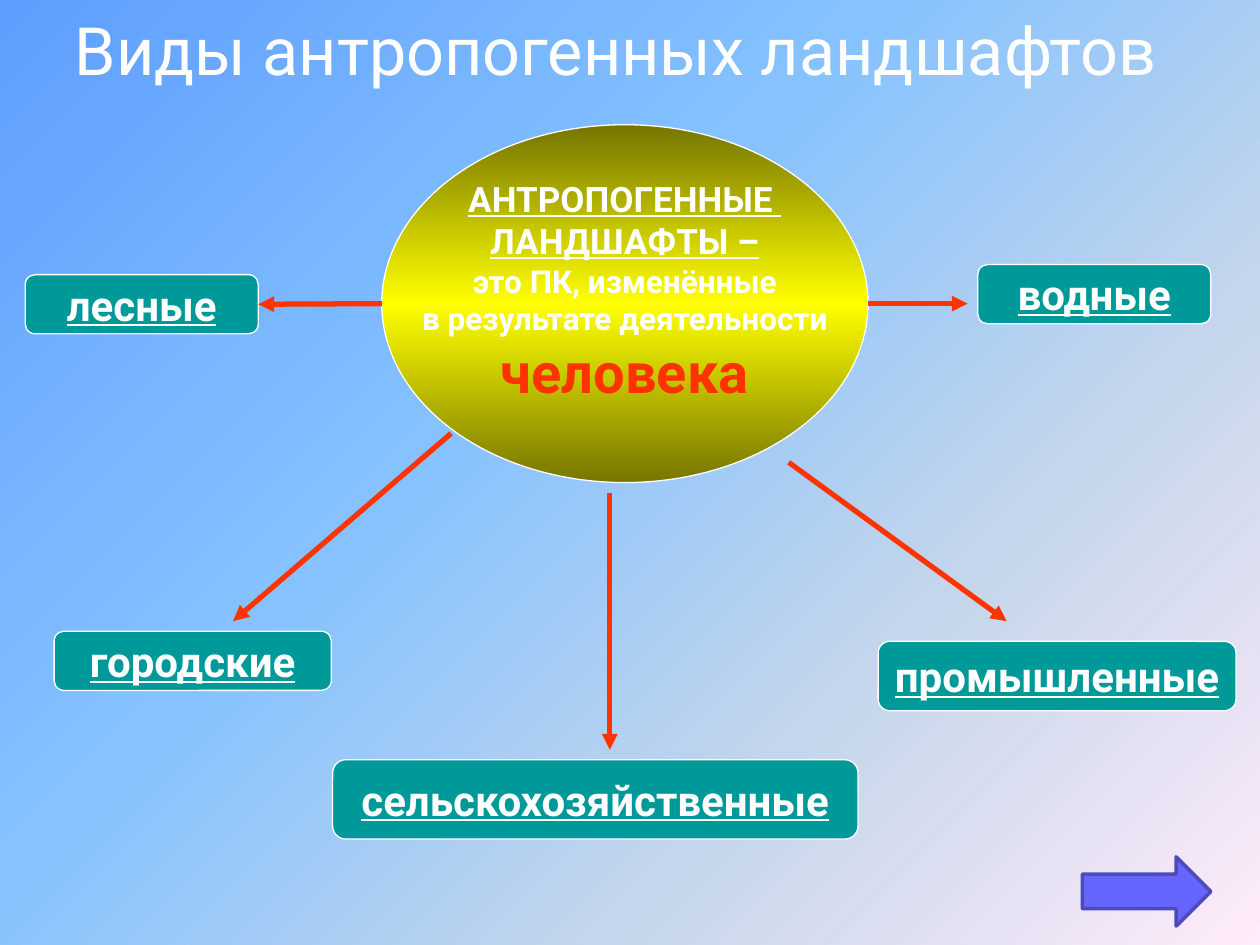
from dataclasses import dataclass
from lxml.etree import SubElement
from pptx import Presentation
from pptx.dml.color import RGBColor
from pptx.enum.shapes import MSO_CONNECTOR, MSO_SHAPE
from pptx.enum.text import MSO_ANCHOR, PP_ALIGN
from pptx.oxml.ns import qn
from pptx.util import Inches, Pt


@dataclass(frozen=True)
class Theme:
    """Colours, type sizes and the grid step of the slide."""
    font: str = "Roboto"
    white: str = "FFFFFF"
    teal: str = "009999"
    red: str = "FF3300"
    blue: str = "6666FF"
    navy: str = "4B4BBD"
    sky: tuple = ((0, "5E9EFF"), (40, "85C2FF"), (70, "C4D6EB"), (100, "FFEBFA"))
    gold: tuple = ((0, "767600"), (50, "FFFF00"), (100, "767600"))
    title: int = 38
    label: int = 24
    head: int = 20
    body: int = 18
    key: int = 32
    step: float = 0.1


LOOK = Theme()
TITLE = "Виды антропогенных ландшафтов"
CORE = (
    ("АНТРОПОГЕННЫЕ ", LOOK.head, LOOK.white, True),
    ("ЛАНДШАФТЫ –", LOOK.head, LOOK.white, True),
    ("это ПК, изменённые", LOOK.body, LOOK.white, False),
    ("в результате деятельности", LOOK.body, LOOK.white, False),
    ("человека", LOOK.key, LOOK.red, False),
)
KINDS = (
    ("лесные", (2, 21.8, 18.5, 4.7)),
    ("городские", (4.3, 50.1, 22, 4.7)),
    ("сельскохозяйственные", (26.4, 60.3, 41.7, 6.3)),
    ("промышленные", (69.7, 50.9, 28.4, 5.5)),
    ("водные", (77.6, 21, 18.5, 4.7)),
)
RAYS = {
    "лесные": (30.3, 24.1, 20.5, 24.1),
    "водные": (68.9, 24.1, 76.8, 24.1),
    "городские": (35.8, 34.4, 18.5, 49.3),
    "сельскохозяйственные": (48.4, 39.1, 48.4, 59.5),
    "промышленные": (62.6, 36.7, 79.9, 49.3),
}


def grid(spots):
    """Turn columns and rows into lengths."""
    return [Inches(spot * LOOK.step) for spot in spots]


def apply(item, **values):
    """Set each named value on an item."""
    for name, value in values.items():
        setattr(item, name, value)


def blend(fill, root, stops, angle):
    """Give a fill a gradient with any number of stops."""
    fill.gradient()
    grad = next(root.iter(qn("a:gradFill")))
    bag = grad.find(qn("a:gsLst"))
    for old in list(bag):
        bag.remove(old)
    for place, tone in stops:
        stop = SubElement(bag, qn("a:gs"), pos=str(place * 1000))
        SubElement(stop, qn("a:srgbClr"), val=tone)
    grad.find(qn("a:lin")).set("ang", str(angle * 60000))


def write(shape, lines, **frame):
    """Write centred lines of (text, size, colour, underline, bold)."""
    text = shape.text_frame
    apply(text, vertical_anchor=MSO_ANCHOR.MIDDLE, **frame)
    for order, (words, size, tone, under, bold) in enumerate(lines):
        para = text.add_paragraph() if order else text.paragraphs[0]
        para.alignment = PP_ALIGN.CENTER
        run = para.add_run()
        run.text = words
        apply(run.font, name=LOOK.font, size=Pt(size), bold=bold, underline=under)
        run.font.color.rgb = RGBColor.from_string(tone)


def draw(slide, kind, spots, edge, width, tone=None):
    """Draw a preset shape with an outline and an optional solid fill."""
    shape = slide.shapes.add_shape(kind, *grid(spots))
    shape.shadow.inherit = False
    shape.line.color.rgb = RGBColor.from_string(edge)
    shape.line.width = Pt(width)
    if tone:
        shape.fill.solid()
        shape.fill.fore_color.rgb = RGBColor.from_string(tone)
    return shape


def head(slide):
    """Add the slide title."""
    box = slide.shapes.add_textbox(*grid((3.9, 0, 90, 7.7)))
    write(box, [(TITLE, LOOK.title, LOOK.white, False, False)], word_wrap=True)


def core(slide):
    """Add the central oval with the definition."""
    oval = draw(slide, MSO_SHAPE.OVAL, (30.3, 9.9, 38.6, 28.4), LOOK.white, 0.75)
    blend(oval.fill, oval.element.spPr, LOOK.gold, 90)
    write(oval, [(*line, True) for line in CORE], word_wrap=False,
          margin_top=0, margin_bottom=Inches(0.2))


def label(slide, name, spots):
    """Add a rounded box naming one kind of landscape."""
    box = draw(slide, MSO_SHAPE.ROUNDED_RECTANGLE, spots, LOOK.white, 0.75, LOOK.teal)
    write(box, [(name, LOOK.label, LOOK.white, True, True)], word_wrap=False)
    return box


def ray(slide, spots):
    """Add a red arrow between two grid points."""
    line = slide.shapes.add_connector(MSO_CONNECTOR.STRAIGHT, *grid(spots))
    line.line.color.rgb = RGBColor.from_string(LOOK.red)
    line.line.width = Pt(3)
    SubElement(line.line._get_or_add_ln(), qn("a:tailEnd"), type="triangle")
    SubElement(line.element.spPr, qn("a:effectLst"))
    return line


def main():
    """Build the slide and save it."""
    deck = Presentation()
    apply(deck, slide_width=Inches(10), slide_height=Inches(7.5))
    slide = deck.slides.add_slide(deck.slide_layouts[6])
    blend(slide.background.fill, slide.element, LOOK.sky, 45)
    head(slide)
    core(slide)
    boxes = {name: label(slide, name, spots) for name, spots in KINDS}
    rays = {name: ray(slide, spots) for name, spots in RAYS.items()}
    rays["лесные"].end_connect(boxes["лесные"], 3)
    draw(slide, MSO_SHAPE.RIGHT_ARROW, (85.9, 68, 10.2, 5.5), LOOK.navy, 2, LOOK.blue)
    deck.save("out.pptx")


if __name__ == "__main__":
    main()
